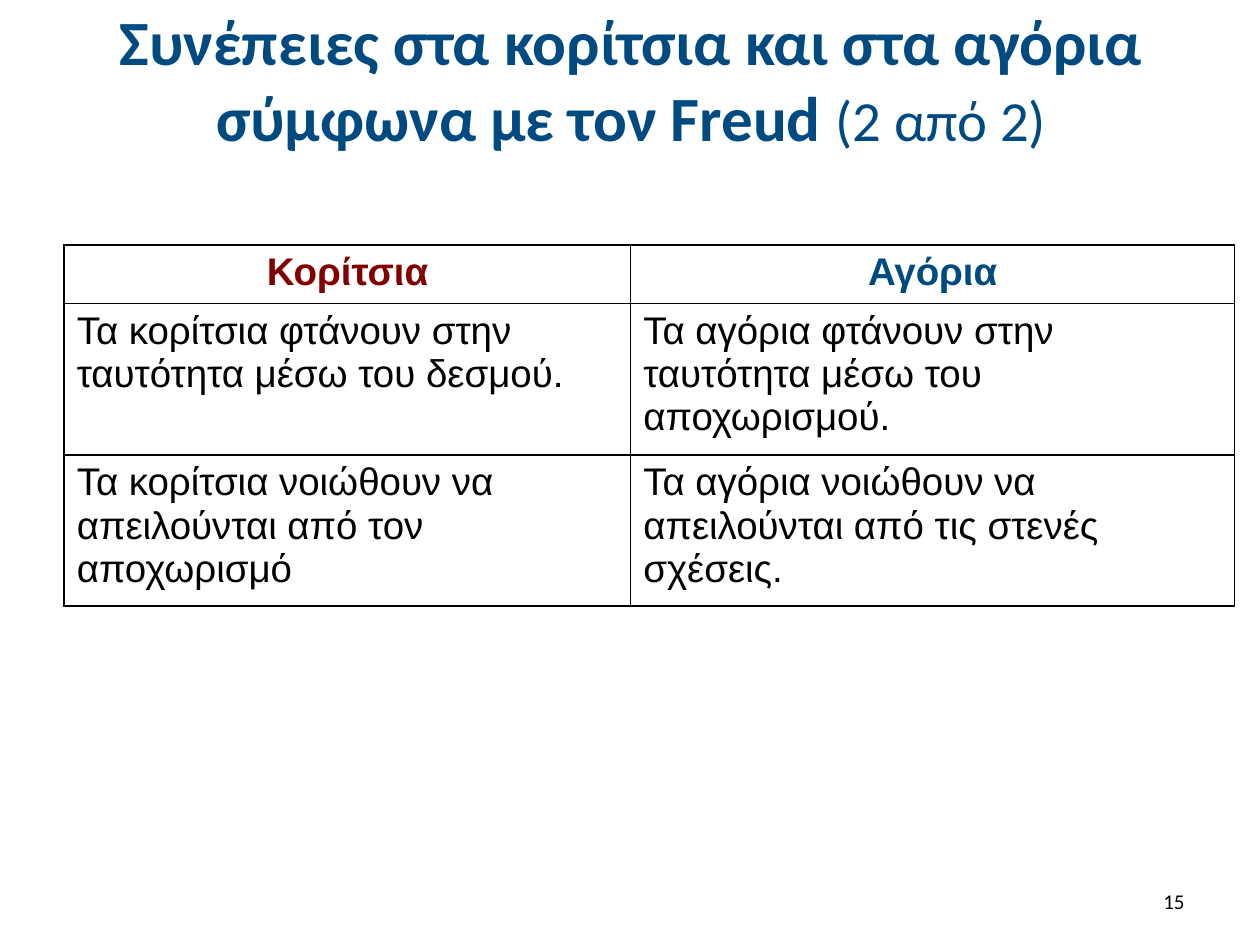
from lxml.etree import SubElement
from pptx import Presentation
from pptx.dml.color import RGBColor
from pptx.enum.text import MSO_ANCHOR, MSO_AUTO_SIZE, PP_ALIGN
from pptx.oxml.ns import qn
from pptx.util import Inches, Pt

COLORS = {"navy": "004A82", "maroon": "820000", "black": "000000"}
WIDTH, HEIGHT = 10, 7.5


class SlideBuilder:
    heading_font = "Calibri"
    table_font = "Arial"

    def __init__(self, prs):
        self.slide = prs.slides.add_slide(prs.slide_layouts[5])

    def box(self, left, top, width, height):
        return (Inches(left * WIDTH), Inches(top * HEIGHT),
                Inches(width * WIDTH), Inches(height * HEIGHT))

    def style(self, run, font, size, color, bold=False):
        run.font.name = font
        run.font.size = Pt(size)
        run.font.bold = bold
        run.font.color.rgb = RGBColor.from_string(COLORS[color])

    def title(self, main, part, area):
        heading = self.slide.shapes.title
        heading.left, heading.top, heading.width, heading.height = self.box(*area)
        frame = heading.text_frame
        frame.word_wrap = True
        frame.auto_size = MSO_AUTO_SIZE.NONE
        frame.vertical_anchor = MSO_ANCHOR.MIDDLE
        paragraph = frame.paragraphs[0]
        paragraph.alignment = PP_ALIGN.CENTER
        for text, size, bold in ((main, 36, True), (part, 32.4, False)):
            run = paragraph.add_run()
            run.text = text
            self.style(run, self.heading_font, size, "navy", bold)

    def page_number(self, number, area):
        frame = self.slide.shapes.add_textbox(*self.box(*area)).text_frame
        frame.word_wrap = True
        frame.vertical_anchor = MSO_ANCHOR.MIDDLE
        frame.text = number
        paragraph = frame.paragraphs[0]
        paragraph.alignment = PP_ALIGN.RIGHT
        self.style(paragraph.runs[0], self.heading_font, 12, "black")

    def border(self, cell):
        properties = cell._tc.get_or_add_tcPr()
        for position, side in enumerate(("a:lnL", "a:lnR", "a:lnT", "a:lnB")):
            line = SubElement(properties, qn(side), w=str(Pt(1)))
            fill = SubElement(line, qn("a:solidFill"))
            SubElement(fill, qn("a:srgbClr"), val=COLORS["black"])
            properties.insert(position, line)

    def table(self, rows, area, column_shares, row_shares, header_colors):
        left, top, width, height = self.box(*area)
        grid = self.slide.shapes.add_table(
            len(rows), len(column_shares), left, top, width, height).table
        grid.first_row = grid.horz_banding = False
        for column, share in zip(grid.columns, column_shares):
            column.width = int(width * share)
        for row, share in zip(grid.rows, row_shares):
            row.height = int(height * share)
        for r, texts in enumerate(rows):
            for c, text in enumerate(texts):
                header = r == 0
                cell = grid.cell(r, c)
                cell.text = text
                cell.fill.background()
                self.border(cell)
                paragraph = cell.text_frame.paragraphs[0]
                paragraph.alignment = PP_ALIGN.CENTER if header else PP_ALIGN.LEFT
                color = header_colors[c] if header else "black"
                self.style(paragraph.runs[0], self.table_font, 22, color, header)


def main():
    prs = Presentation()
    prs.slide_width, prs.slide_height = Inches(WIDTH), Inches(HEIGHT)
    builder = SlideBuilder(prs)
    builder.title("Συνέπειες στα κορίτσια και στα αγόρια σύμφωνα με τον Freud ",
                  "(2 από 2)", (0.051, 0.017, 0.9, 0.132))
    builder.page_number("15", (0.717, 0.927, 0.233, 0.053))
    consequences = [
        ("Κορίτσια", "Αγόρια"),
        ("Τα κορίτσια φτάνουν στην ταυτότητα μέσω του δεσμού.",
         "Τα αγόρια φτάνουν στην ταυτότητα μέσω του αποχωρισμού."),
        ("Τα κορίτσια νοιώθουν να απειλούνται από τον αποχωρισμό",
         "Τα αγόρια νοιώθουν να απειλούνται από τις στενές σχέσεις."),
    ]
    builder.table(consequences, (0.051, 0.259, 0.929, 0.359),
                  (0.484, 0.516), (0.16, 0.42, 0.42), ("maroon", "navy"))
    prs.save("out.pptx")


if __name__ == "__main__":
    main()
